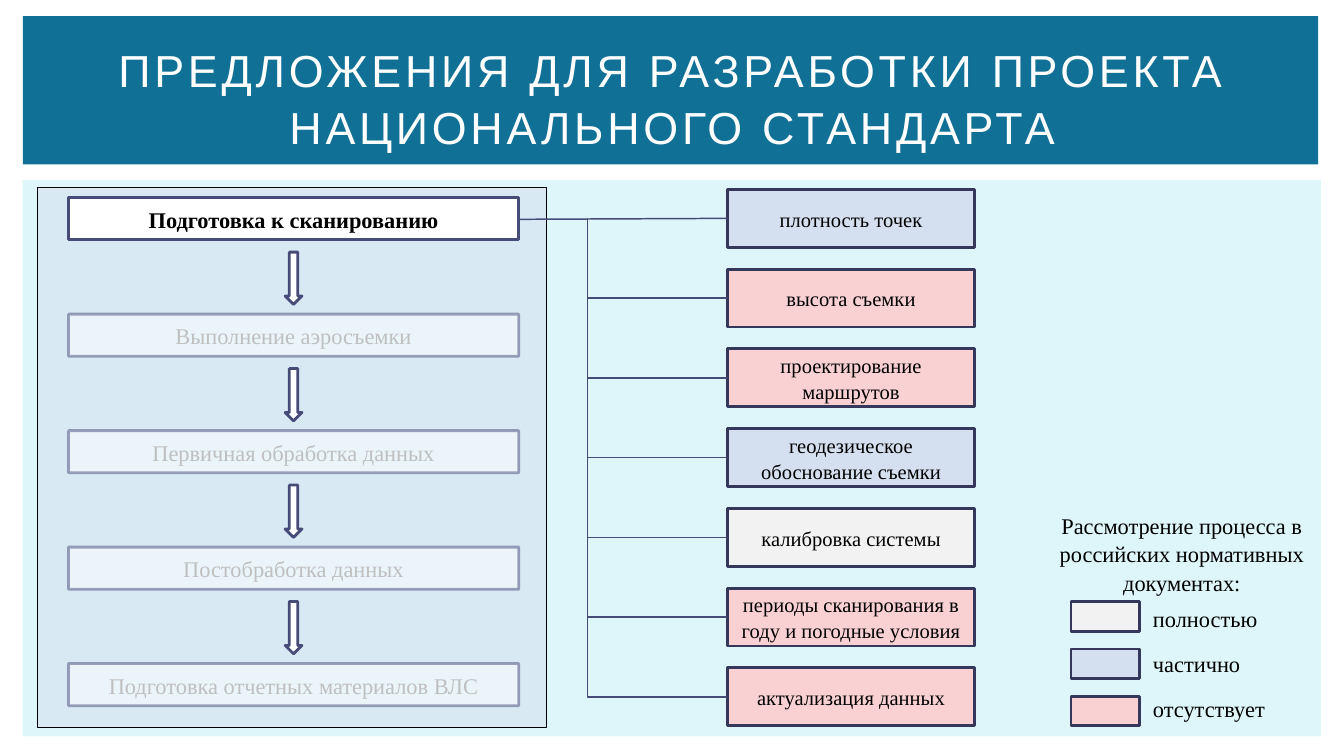
from dataclasses import dataclass
from typing import Any

from lxml import etree
from pptx import Presentation
from pptx import util as u
from pptx.dml.color import RGBColor
from pptx.enum import shapes, text
from pptx.oxml.ns import qn

WHITE = RGBColor(0xFF, 0xFF, 0xFF)
BLACK = RGBColor(0x00, 0x00, 0x00)
MUTED = RGBColor(0xBF, 0xBF, 0xBF)
TEAL = RGBColor(0x11, 0x70, 0x96)
PALE_CYAN = RGBColor(0xDE, 0xF5, 0xFA)
INDIGO = RGBColor(0x47, 0x4B, 0x78)
DARK_INDIGO = RGBColor(0x35, 0x38, 0x5A)
FULL = RGBColor(0xF2, 0xF2, 0xF2)
PARTIAL = RGBColor(0xD4, 0xDF, 0xEF)
ABSENT = RGBColor(0xF9, 0xD1, 0xD3)

RECT = shapes.MSO_SHAPE.RECTANGLE
ARROW = shapes.MSO_SHAPE.DOWN_ARROW
STRAIGHT = shapes.MSO_CONNECTOR.STRAIGHT
ELBOW = shapes.MSO_CONNECTOR.ELBOW
CENTER = text.PP_ALIGN.CENTER
JUSTIFY = text.PP_ALIGN.JUSTIFY
MIDDLE = text.MSO_ANCHOR.MIDDLE
TOP = text.MSO_ANCHOR.TOP

TITLE = "ПРЕДЛОЖЕНИЯ ДЛЯ РАЗРАБОТКИ ПРОЕКТА НАЦИОНАЛЬНОГО СТАНДАРТА"
STAGES = [
    "Подготовка к сканированию",
    "Выполнение аэросъемки",
    "Первичная обработка данных",
    "Постобработка данных",
    "Подготовка отчетных материалов ВЛС",
]
TOPICS = [
    ("плотность точек", PARTIAL),
    ("высота съемки", ABSENT),
    ("проектирование маршрутов", ABSENT),
    ("геодезическое обоснование съемки", PARTIAL),
    ("калибровка системы", FULL),
    ("периоды сканирования в году и погодные условия", ABSENT),
    ("актуализация данных", ABSENT),
]
LEGEND_TITLE = "Рассмотрение процесса в российских нормативных документах:"
LEGEND = [("полностью", FULL), ("частично", PARTIAL), ("отсутствует", ABSENT)]


def apply(target, values):
    for name, value in values.items():
        setattr(target, name, value)


def set_alpha(color_parent, percent):
    """Make a solid colour partly transparent."""
    color = color_parent.find(qn("a:solidFill"))[0]
    etree.SubElement(color, qn("a:alpha")).set("val", str(percent * 1000))


@dataclass
class Canvas:
    page: Any
    font: str = "Times New Roman"
    spacing: float = 1.05
    wire_color: RGBColor = INDIGO
    wire_width: float = 0.79

    def shape(self, kind, at, fill, line=None, width=1.5, alpha=None, line_alpha=None):
        box = self.page.shapes.add_shape(kind, *map(u.Pt, at))
        box.shadow.inherit = False
        box.fill.solid()
        box.fill.fore_color.rgb = fill
        if alpha:
            set_alpha(box.element.spPr, alpha)
        if line is None:
            box.line.fill.background()
        else:
            box.line.color.rgb = line
            box.line.width = u.Pt(width)
            if line_alpha:
                set_alpha(box.element.spPr.find(qn("a:ln")), line_alpha)
        return box

    def fill_text(self, box, words, size, color=BLACK, align=CENTER, anchor=MIDDLE,
                  inset=5, **font):
        frame = box.text_frame
        apply(frame, {"word_wrap": True, "vertical_anchor": anchor,
                      "margin_left": u.Pt(inset), "margin_right": u.Pt(inset)})
        para = frame.paragraphs[0]
        apply(para, {"alignment": align, "line_spacing": self.spacing})
        span = para.add_run()
        span.text = words
        apply(span.font, {"name": self.font, "size": u.Pt(size), **font})
        span.font.color.rgb = color

    def label(self, at, words, size, **style):
        box = self.page.shapes.add_textbox(*map(u.Pt, at))
        self.fill_text(box, words, size, inset=7.2, **style)
        return box

    def wire(self, x1, y1, x2, y2, kind=STRAIGHT):
        wire = self.page.shapes.add_connector(kind, *map(u.Pt, (x1, y1, x2, y2)))
        wire.line.color.rgb = self.wire_color
        wire.line.width = u.Pt(self.wire_width)
        etree.SubElement(wire.element.spPr, qn("a:effectLst"))
        return wire

    def corner(self, x1, y1, x2, y2):
        """Draw a one-bend connector that goes down, then right."""
        mid_x, mid_y = (x1 + x2) / 2, (y1 + y2) / 2
        half_run, half_rise = (y2 - y1) / 2, (x2 - x1) / 2
        wire = self.wire(mid_x + half_run, mid_y - half_rise,
                         mid_x - half_run, mid_y + half_rise, ELBOW)
        properties = wire.element.spPr
        properties.find(qn("a:xfrm")).set("rot", str(270 * 60000))
        properties.find(qn("a:prstGeom")).set("prst", "bentConnector2")


def draw_header(canvas):
    canvas.shape(RECT, (12.2, 96.5, 695.5, 298), PALE_CYAN)
    canvas.shape(RECT, (12.2, 8.6, 694, 79.5), TEAL)
    title = canvas.label((30.2, 20.9, 660.2, 61.9), TITLE, 24, color=WHITE, name="Arial")
    for properties in title.element.iter(qn("a:rPr")):
        properties.set("spc", "200")


def draw_stages(canvas):
    left, top, width, height, pitch = 36.7, 105.9, 241.2, 22.6, 62.4
    canvas.shape(RECT, (20.2, 100.6, 272.2, 289.2), PARTIAL, BLACK, 0.25, alpha=50)
    for index, stage in enumerate(STAGES):
        current = index == 0
        alpha = None if current else 50
        y = top + index * pitch
        box = canvas.shape(RECT, (left, y, width, height), WHITE, INDIGO,
                           alpha=alpha, line_alpha=alpha)
        canvas.fill_text(box, stage, 12, BLACK if current else MUTED, bold=current)
        if index < len(STAGES) - 1:
            canvas.shape(ARROW, (152.8, y + 29.2, 9, 28), WHITE, INDIGO)


def draw_topics(canvas):
    left, top, width, height, pitch = 389.7, 101.5, 132.5, 31, 42.72
    stage_right, trunk = 277.9, 314.8
    first_middle = top + height / 2
    for index, (topic, fill) in enumerate(TOPICS):
        y = top + index * pitch
        box = canvas.shape(RECT, (left, y, width, height), fill, DARK_INDIGO)
        canvas.fill_text(box, topic, 11)
        middle = y + height / 2
        if index == 0:
            canvas.wire(stage_right, middle + 0.5, left, middle)
        elif index == len(TOPICS) - 1:
            canvas.corner(trunk, first_middle, left, middle)
        else:
            canvas.wire(left, middle, trunk, middle)


def draw_legend(canvas):
    canvas.label((558.7, 270.2, 149, 51.1), LEGEND_TITLE, 12, anchor=TOP)
    for index, (name, fill) in enumerate(LEGEND):
        canvas.shape(RECT, (573.8, 322.4 + index * 25.3, 36.7, 15.8), fill, DARK_INDIGO)
        canvas.label((610.6, 319.8 + index * 24.3, 105, 21.6), name, 12,
                     align=JUSTIFY, anchor=TOP)


def main():
    deck = Presentation()
    apply(deck, {"slide_width": u.Pt(720), "slide_height": u.Pt(405)})
    canvas = Canvas(deck.slides.add_slide(deck.slide_layouts[6]))
    draw_header(canvas)
    draw_stages(canvas)
    draw_topics(canvas)
    draw_legend(canvas)
    deck.save("out.pptx")


if __name__ == "__main__":
    main()
